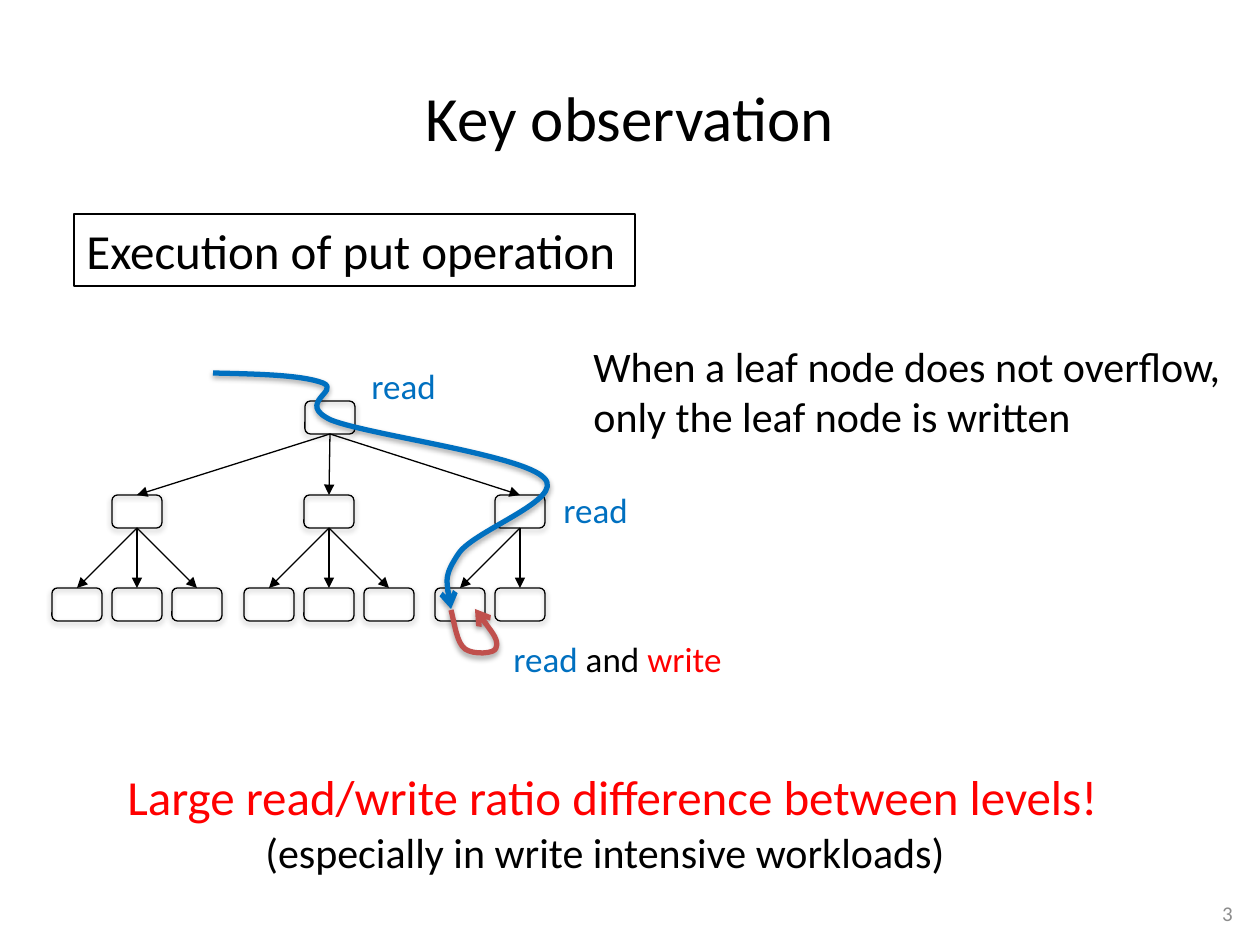
from lxml.etree import SubElement
from pptx import Presentation
from pptx.dml.color import RGBColor
from pptx.enum.shapes import MSO_CONNECTOR, MSO_SHAPE
from pptx.enum.text import MSO_ANCHOR, PP_ALIGN
from pptx.oxml.ns import qn
from pptx.util import Pt

PX = 914400 / 126
FONT = "Calibri"
BLACK, BLUE, RED, BRICK, GREY = "000000", "0070C0", "FF0000", "C0504D", "8C8C8C"
NODE_W, NODE_H = 50, 33
ROOT_Y, MID_Y, LEAF_Y = 401, 495, 588
LEAF_GAP = 60


def emu(*vals):
    return [round(v * PX) for v in vals]


def rgb(code):
    return RGBColor.from_string(code)


def stroke(line, color, width):
    line.color.rgb = rgb(color)
    line.width = Pt(width)


def add_head(line, kind):
    """Put an arrowhead at the end of a line."""
    SubElement(line._get_or_add_ln(), qn("a:tailEnd"), type=kind)


def add_shadow(shape, alpha, dist):
    """Give a shape a soft black shadow straight below it."""
    shape.shadow.inherit = False
    effects = shape._element.spPr.find(qn("a:effectLst"))
    outer = SubElement(effects, qn("a:outerShdw"), blurRad="40000",
                       dist=str(dist), dir="5400000", rotWithShape="0")
    color = SubElement(outer, qn("a:srgbClr"), val=BLACK)
    SubElement(color, qn("a:alpha"), val=str(alpha * 1000))


def add_text(slide, area, paras, size, align=PP_ALIGN.LEFT, wrap=False,
             anchor=MSO_ANCHOR.TOP):
    """Add a text box; each paragraph is a list of (text, colour) runs."""
    box = slide.shapes.add_textbox(*emu(*area))
    frame = box.text_frame
    frame.word_wrap = wrap
    frame.vertical_anchor = anchor
    for i, runs in enumerate(paras):
        para = frame.add_paragraph() if i else frame.paragraphs[0]
        para.alignment = align
        para.font.size = Pt(size)
        para.font.name = FONT
        if len(runs) == 1:
            para.font.color.rgb = rgb(runs[0][1])
        for words, color in runs:
            run = para.add_run()
            run.text = words
            if len(runs) > 1:
                run.font.color.rgb = rgb(color)
    return box


def add_node(slide, mid, top):
    node = slide.shapes.add_shape(
        MSO_SHAPE.ROUNDED_RECTANGLE,
        *emu(mid - NODE_W / 2, top, NODE_W, NODE_H))
    node.fill.background()
    stroke(node.line, BLACK, 0.75)
    add_shadow(node, 38, 20000)
    return node


def add_link(slide, upper, lower):
    """Draw an arrow from one node down to another."""
    link = slide.shapes.add_connector(MSO_CONNECTOR.STRAIGHT, 0, 0, 0, 0)
    link.begin_connect(upper, 2)
    link.end_connect(lower, 0)
    stroke(link.line, BLACK, 0.75)
    add_head(link.line, "triangle")
    SubElement(link._element.spPr, qn("a:effectLst"))


def add_curve(slide, start, curves, color):
    """Draw a curved arrow; each curve is two control points and an end."""
    ends = [curve[-1] for curve in curves]
    left, top = (min(vals) for vals in zip(start, *ends))
    pen = slide.shapes.build_freeform(*start, scale=PX)
    pen.add_line_segments(ends, close=False)
    shape = pen.convert_to_shape()
    track = shape._element.spPr.find(".//" + qn("a:path"))
    for seg in track.findall(qn("a:lnTo")):
        track.remove(seg)
    for curve in curves:
        bend = SubElement(track, qn("a:cubicBezTo"))
        for x, y in curve:
            SubElement(bend, qn("a:pt"), x=str(x - left), y=str(y - top))
    shape.fill.background()
    stroke(shape.line, color, 3)
    add_head(shape.line, "arrow")
    add_shadow(shape, 35, 23000)


def add_tree(slide):
    root = add_node(slide, 330, ROOT_Y)
    for mid, sides in ((137, (-1, 0, 1)), (329, (-1, 0, 1)), (520, (-1, 0))):
        child = add_node(slide, mid, MID_Y)
        add_link(slide, root, child)
        for side in sides:
            leaf = add_node(slide, mid + side * LEAF_GAP, LEAF_Y)
            add_link(slide, child, leaf)


def main():
    deck = Presentation()
    deck.slide_width, deck.slide_height = emu(1260, 945)
    slide = deck.slides.add_slide(deck.slide_layouts[6])

    add_text(slide, (63, 38, 1134, 157), [[("Key observation", BLACK)]], 36,
             PP_ALIGN.CENTER, True, MSO_ANCHOR.MIDDLE)
    add_text(slide, (951, 888, 294, 50), [[("3", GREY)]], 12,
             PP_ALIGN.RIGHT, True, MSO_ANCHOR.MIDDLE)

    add_tree(slide)
    add_curve(slide, (213, 373), [
        ((258, 374), (302, 375), (323, 383)),
        ((341, 391), (295, 403), (331, 420)),
        ((368, 435), (523, 455), (544, 478)),
        ((566, 499), (475, 530), (459, 553)),
        ((444, 575), (447, 591), (451, 609))], BLUE)
    for left, top in ((359, 358), (551, 482)):
        add_text(slide, (left, top, 91, 55), [[("read", BLUE)]], 20)
    add_text(slide, (501, 631, 236, 55),
             [[("read", BLUE), (" and ", BLACK), ("write", RED)]], 20)
    add_text(slide, (581, 334, 659, 115),
             [[("When a leaf node does not overflow,", BLACK)],
              [("only the leaf node is written", BLACK)]], 24)
    add_curve(slide, (451, 610), [
        ((455, 626), (457, 643), (465, 649)),
        ((473, 655), (495, 654), (496, 648)),
        ((499, 640), (486, 624), (475, 609))], BRICK)

    add_text(slide, (115, 760, 1007, 72),
             [[("Large read/write ratio difference between levels!", RED)]], 28)
    head = add_text(slide, (74, 214, 561, 72),
                    [[("Execution of put operation", BLACK)]], 28)
    stroke(head.line, BLACK, 0.75)
    add_text(slide, (253, 820, 721, 63),
             [[("(especially in write intensive workloads)", BLACK)]], 24)
    deck.save("out.pptx")


if __name__ == "__main__":
    main()
